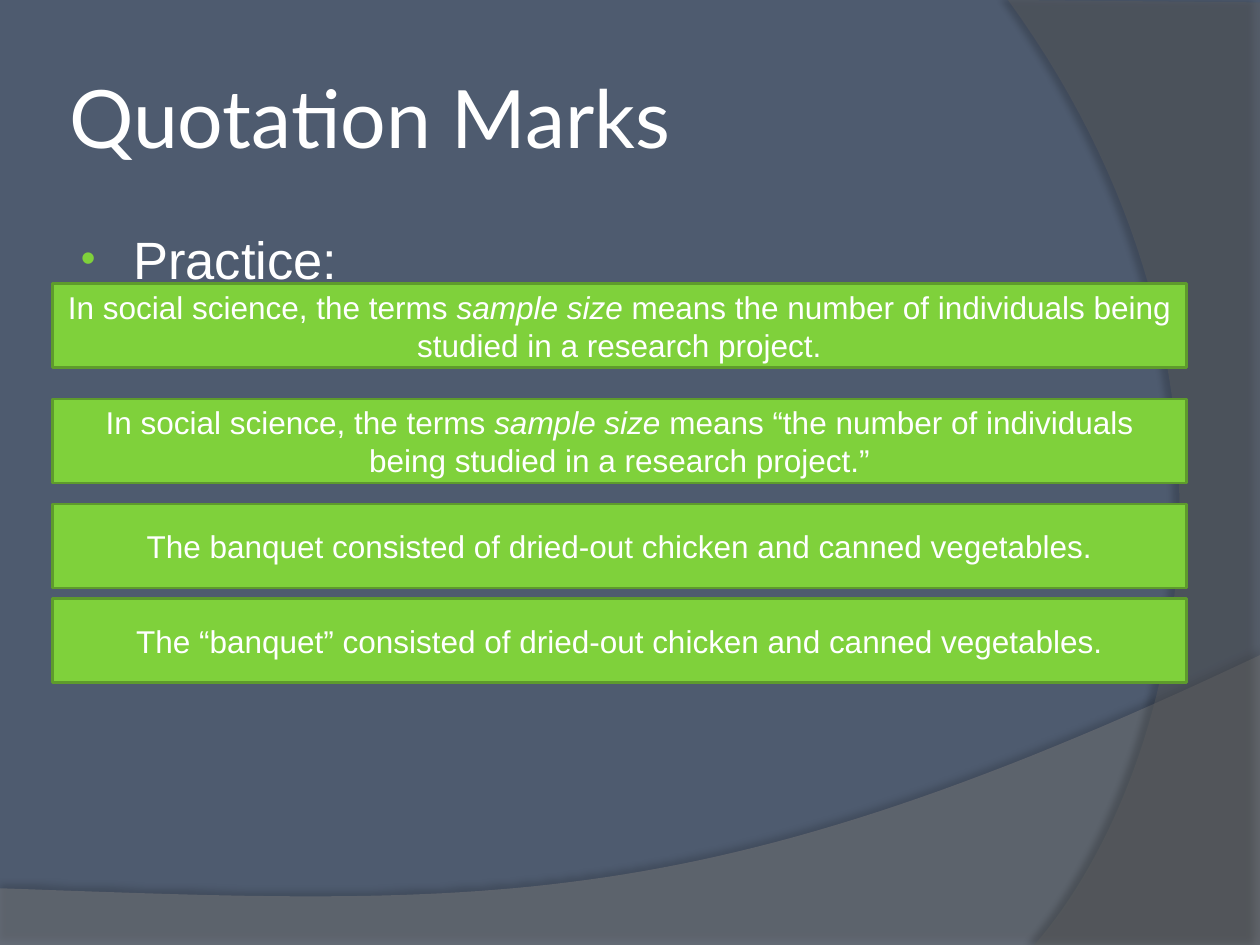
from lxml import etree
from pptx import Presentation
from pptx.dml.color import RGBColor
from pptx.enum.shapes import MSO_SHAPE
from pptx.enum.text import MSO_ANCHOR, PP_ALIGN
from pptx.oxml.ns import qn
from pptx.util import Pt

RECT = MSO_SHAPE.RECTANGLE
LEFT, MID = PP_ALIGN.LEFT, PP_ALIGN.CENTER
TOP, CENTER = MSO_ANCHOR.TOP, MSO_ANCHOR.MIDDLE
HEX = {"back": "4E5B6F", "wave": "7F7F7F", "side": "5E5E5E", "dark": "000000",
       "green": "7FD13B", "edge": "5E9B2C", "white": "FFFFFF"}
TERM = "In social science, the terms "
SIZE = "sample size "
MEAL = "consisted of dried-out chicken and canned vegetables."
ROWS = [
    (162, [TERM, SIZE, "means the number of individuals being studied in a research project."]),
    (228, [TERM, SIZE, "means “the number of individuals being studied in a research project.”"]),
    (288, ["The banquet " + MEAL]),
    (342, ["The “banquet” " + MEAL]),
]


def color(name):
    """Return the named colour."""
    return RGBColor.from_string(HEX[name])


def node(root, tag, **attrs):
    """Add a drawing element with the given attributes."""
    return etree.SubElement(root, qn("a:" + tag), {k: str(v) for k, v in attrs.items()})


def write(shape, runs, size, font="Arial", align=LEFT, anchor=CENTER):
    """Fill a shape with one paragraph; the term in it is italic."""
    frame = shape.text_frame
    frame.word_wrap = True
    frame.vertical_anchor = anchor
    para = frame.paragraphs[0]
    para.alignment = align
    for text in runs:
        run = para.add_run()
        run.text = text
        run.font.name = font
        run.font.size = Pt(size)
        run.font.italic = text == SIZE
        run.font.color.rgb = color("white")
    return para


def place(shape, box):
    """Move a shape to a box given in points."""
    shape.left, shape.top, shape.width, shape.height = map(Pt, box)


def curve(ends, steps=60):
    """Return points along a cubic curve."""
    a, b, c, d = ends
    out = []
    for i in range(steps + 1):
        t = i / steps
        u = 1 - t
        out.append(tuple(u**3 * a[k] + 3 * u * u * t * b[k] + 3 * u * t * t * c[k] + t**3 * d[k]
                         for k in (0, 1)))
    return out


def wave(slide, layer, points, fill, alpha, shade, dist, angle):
    """Draw a clear backdrop shape with a soft shadow behind all text."""
    first, *rest = [(Pt(x), Pt(y)) for x, y in points]
    pen = slide.shapes.build_freeform(*first, scale=1.0)
    pen.add_line_segments(rest, close=True)
    shape = pen.convert_to_shape()
    shape.fill.solid()
    shape.fill.fore_color.rgb = color(fill)
    shape.line.fill.background()
    props = shape._element.spPr
    node(props.find(".//" + qn("a:srgbClr")), "alpha", val=alpha * 1000)
    glow = node(node(props, "effectLst"), "outerShdw", blurRad=Pt(4), dist=Pt(dist),
                dir=angle * 60000, algn="ctr", rotWithShape=0)
    node(node(glow, "srgbClr", val=HEX["dark"]), "alpha", val=shade * 1000)
    slide.shapes._spTree.insert(2 + layer, shape._element)


def backdrop(slide, box):
    """Draw the background and its two curved bands in the box."""
    x, y, w, h = box
    slide.background.fill.solid()
    slide.background.fill.fore_color.rgb = color("back")
    right, base = x + w, y + h
    low = curve([(right, y + 374.4), (x + 402.5, y + 524.9),
                 (x + 281.5, y + 517.7), (x, y + 507.6)])
    wave(slide, 0, [(x, base), (right, base)] + low, "wave", 45, 35, 3.5, 270)
    bow = curve([(x + 591.1, base), (x + 673.2, y + 445.7),
                 (x + 733, y + 216), (x + 576, y)])
    wave(slide, 1, [(right, y + 1.4), (right, base)] + bow, "side", 40, 45, 4, 180)


def head(slide, box):
    """Place the title."""
    shape = slide.shapes.title
    place(shape, box)
    frame = shape.text_frame
    frame.margin_left = frame.margin_right = Pt(3.6)
    write(shape, ["Quotation Marks"], 46, font="Lato")


def body(slide, box):
    """Place the bulleted list."""
    shape = slide.placeholders[1]
    place(shape, box)
    para = write(shape, ["Practice:"], 30, anchor=TOP)
    para.space_before = Pt(6)
    props = para._p.get_or_add_pPr()
    props.set("marL", str(Pt(33)))
    props.set("indent", str(Pt(-30)))
    node(node(props, "buClr"), "srgbClr", val=HEX["green"])
    node(props, "buSzPct", val=80000)
    node(props, "buFont", typeface="Arial")
    node(props, "buChar", char="•")


def card(slide, box, runs):
    """Draw one green practice sentence."""
    shape = slide.shapes.add_shape(RECT, *map(Pt, box))
    shape.shadow.inherit = False
    shape.fill.solid()
    shape.fill.fore_color.rgb = color("green")
    shape.line.color.rgb = color("edge")
    shape.line.width = Pt(1.5)
    write(shape, runs, 18, align=MID)


def main():
    """Build and save the slide."""
    deck = Presentation()
    deck.slide_width, deck.slide_height = Pt(720), Pt(540)
    slide = deck.slides.add_slide(deck.slide_layouts[1])
    backdrop(slide, (0, 0, 720, 540))
    head(slide, (36, 21.6, 588, 90))
    body(slide, (36, 126, 588, 356.4))
    for top, runs in ROWS:
        card(slide, (30, top, 648, 48), runs)
    deck.save("out.pptx")


if __name__ == "__main__":
    main()
